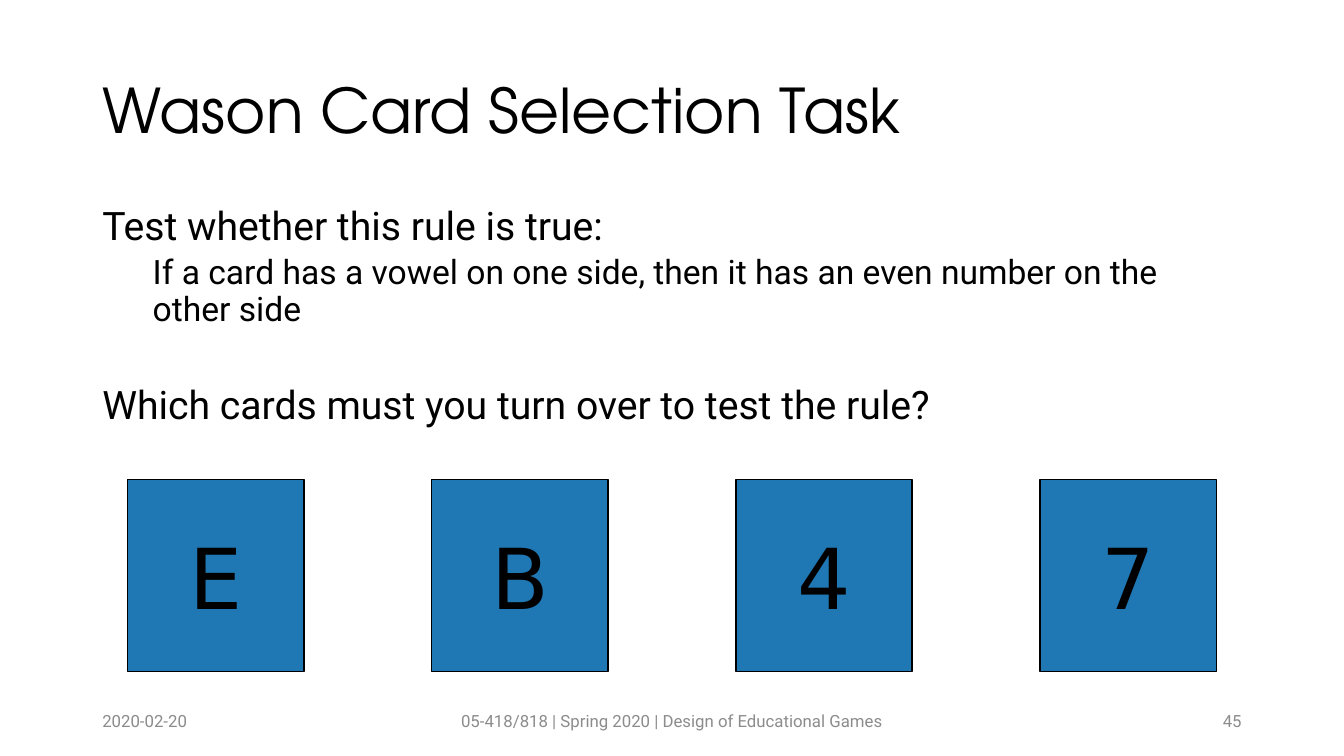
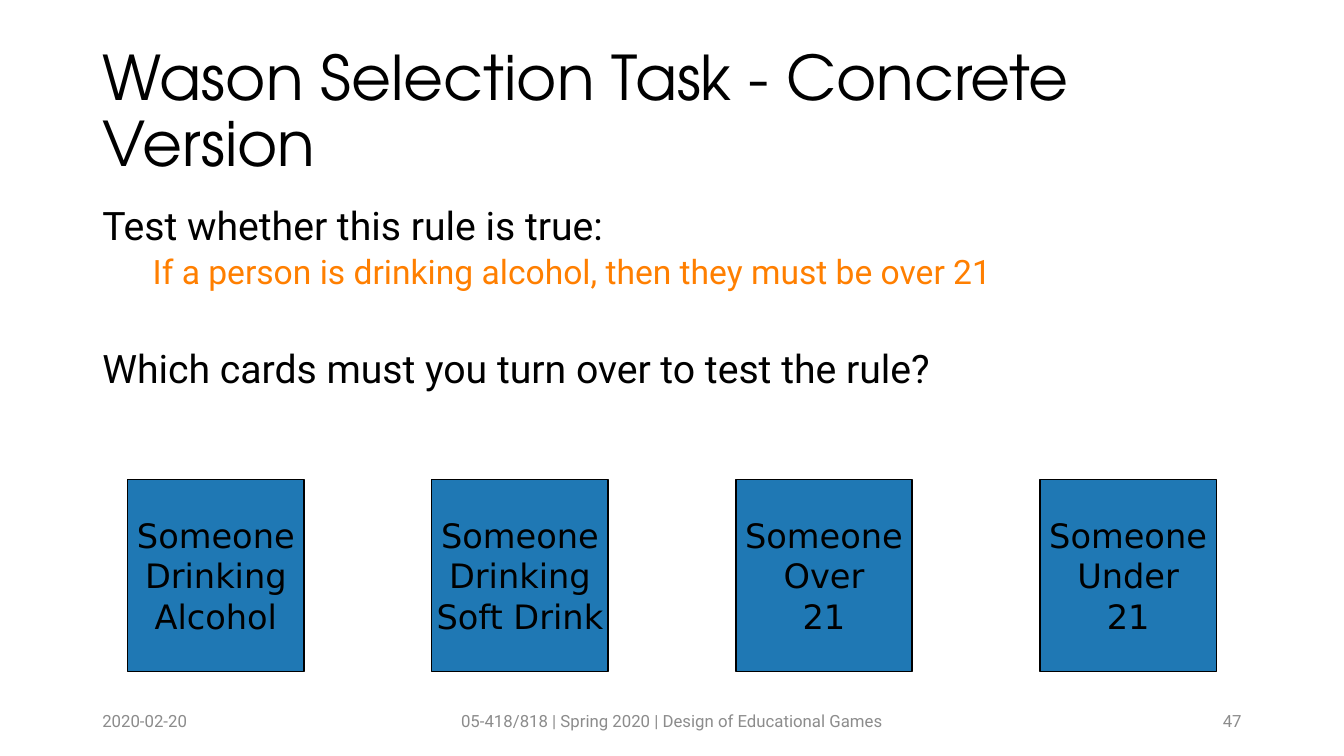
from pptx import Presentation
from pptx.dml.color import RGBColor
from pptx.enum.shapes import MSO_SHAPE
from pptx.enum.text import MSO_ANCHOR, MSO_AUTO_SIZE, PP_ALIGN
from pptx.util import Inches, Pt

RECT = MSO_SHAPE.RECTANGLE
MIDDLE = MSO_ANCHOR.MIDDLE
LEFT, CENTER, RIGHT = PP_ALIGN.LEFT, PP_ALIGN.CENTER, PP_ALIGN.RIGHT
FIXED = MSO_AUTO_SIZE.NONE

COLORS = {"ink": "000000", "card": "1F78B4", "rule": "FF7F00", "foot": "8C8C8C"}
HEAD, BODY, CARD = "TeX Gyre Adventor", "Roboto", "DejaVu Sans"

# Page grid: one text column, and four cards with five equal gaps
WIDE, HIGH = Inches(13.333), Inches(7.5)
SPAN = Inches(11.5)
EDGE = (WIDE - SPAN) // 2
SIDE, MID = Inches(3), Inches(4.5)
CARD_W, CARD_H = Inches(1.75), Inches(1.9)
GAP = (WIDE - 4 * CARD_W) // 5

# Footer cells: left, width, alignment
CELLS = [
    (EDGE, SIDE, LEFT),
    ((WIDE - MID) // 2, MID, CENTER),
    (WIDE - EDGE - SIDE, SIDE, RIGHT),
]

SLIDES = [
    {
        "title": "Wason Card Selection Task",
        "rule": "If a card has a vowel on one side, then it has an even number on the other side",
        "tint": "ink",
        "cards": ["E", "B", "4", "7"],
        "size": 60,
        "page": "45",
    },
    {
        "title": "Wason Selection Task - Concrete Version",
        "rule": "If a person is drinking alcohol, then they must be over 21",
        "tint": "rule",
        "cards": [
            "Someone\nDrinking\nAlcohol",
            "Someone\nDrinking\nSoft Drink",
            "Someone\nOver\n21",
            "Someone\nUnder\n21",
        ],
        "size": 24,
        "page": "47",
    },
]


def style(para, font, size, color, align=LEFT):
    para.alignment = align
    for run in para.runs:
        run.font.name = font
        run.font.size = Pt(size)
        run.font.color.rgb = RGBColor.from_string(COLORS[color])


def add_box(slide, left, top, width, height):
    frame = slide.shapes.add_textbox(left, top, width, height).text_frame
    frame.word_wrap = True
    return frame


deck = Presentation()
deck.slide_width, deck.slide_height = WIDE, HIGH

for data in SLIDES:
    slide = deck.slides.add_slide(deck.slide_layouts[5])

    # Title
    title = slide.shapes.title
    title.left, title.top = EDGE, Inches(0.4)
    title.width, title.height = SPAN, Inches(1.45)
    frame = title.text_frame
    frame.text = data["title"]
    frame.auto_size = FIXED
    frame.word_wrap = True
    frame.vertical_anchor = MIDDLE
    frame.paragraphs[0].line_spacing = 0.9
    style(frame.paragraphs[0], HEAD, 44, "ink")

    # Task: text, size, space before, colour, level
    lines = [
        ("Test whether this rule is true:", 28, 10, "ink", 0),
        (data["rule"], 24, 5, data["tint"], 1),
        ("Which cards must you turn over to test the rule?", 28, 41, "ink", 0),
    ]
    frame = add_box(slide, EDGE, Inches(2), SPAN, Inches(4.5))
    frame.text = "\n".join(line[0] for line in lines)
    for para, (text, size, space, color, level) in zip(frame.paragraphs, lines):
        para.level = level
        para.line_spacing = 0.9
        para.space_before = Pt(space)
        style(para, BODY, size, color)
        props = para._p.get_or_add_pPr()
        props.set("marL", str(level * Inches(0.5)))
        props.set("indent", "0")

    # Footer
    notes = ["2020-02-20", "05-418/818 | Spring 2020 | Design of Educational Games", data["page"]]
    for text, (left, width, align) in zip(notes, CELLS):
        frame = add_box(slide, left, Inches(6.95), width, Inches(0.4))
        frame.text = text
        frame.vertical_anchor = MIDDLE
        style(frame.paragraphs[0], BODY, 12, "foot", align)

    # Cards
    for col, text in enumerate(data["cards"]):
        left = GAP + col * (CARD_W + GAP)
        card = slide.shapes.add_shape(RECT, left, Inches(4.76), CARD_W, CARD_H)
        card.shadow.inherit = False
        card.fill.solid()
        card.fill.fore_color.rgb = RGBColor.from_string(COLORS["card"])
        card.line.color.rgb = RGBColor.from_string(COLORS["ink"])
        card.line.width = Pt(1)
        frame = card.text_frame
        frame.text = text
        frame.word_wrap = False
        frame.vertical_anchor = MIDDLE
        for para in frame.paragraphs:
            style(para, CARD, data["size"], "ink", CENTER)

deck.save("out.pptx")
